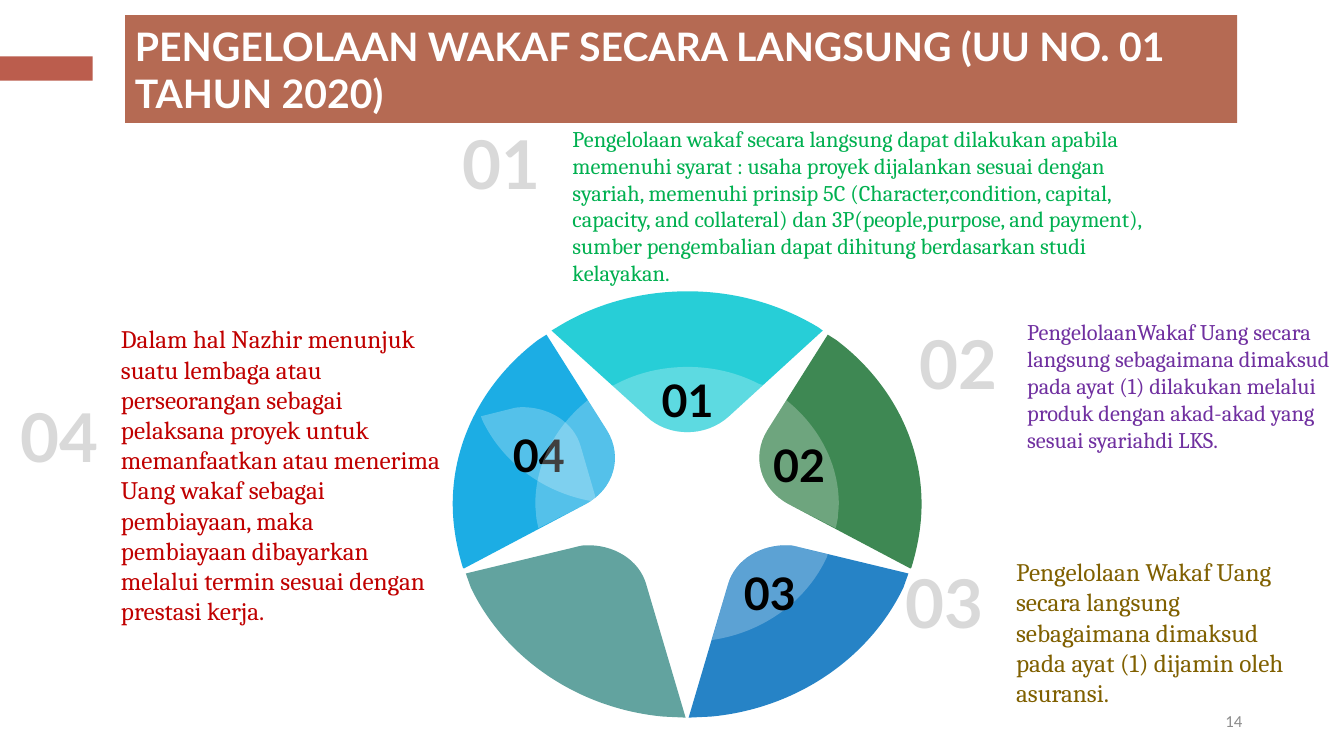
from lxml.etree import SubElement
from pptx import Presentation
from pptx.dml.color import RGBColor
from pptx.enum.shapes import MSO_SHAPE
from pptx.enum.text import MSO_ANCHOR, PP_ALIGN
from pptx.oxml.ns import qn
from pptx.util import Pt

PX = 9144  # EMU per px, 100 px to the inch

WHITE = RGBColor(0xFF, 0xFF, 0xFF)
BLACK = RGBColor(0x00, 0x00, 0x00)
PALE_GREY = RGBColor(0xD9, 0xD9, 0xD9)
MID_GREY = RGBColor(0x8C, 0x8C, 0x8C)
BRICK = RGBColor(0xBB, 0x5D, 0x4D)
CLAY = RGBColor(0xB5, 0x6A, 0x53)
TURQUOISE = RGBColor(0x27, 0xCE, 0xD7)
FOREST = RGBColor(0x3E, 0x88, 0x53)
BLUE = RGBColor(0x26, 0x83, 0xC6)
TEAL = RGBColor(0x62, 0xA3, 0x9F)
SKY = RGBColor(0x1C, 0xAD, 0xE4)
RED = RGBColor(0xC0, 0x00, 0x00)
GREEN = RGBColor(0x00, 0xB0, 0x50)
OLIVE = RGBColor(0x80, 0x60, 0x00)
PURPLE = RGBColor(0x70, 0x30, 0xA0)

# Content
TITLE = "PENGELOLAAN WAKAF SECARA LANGSUNG (UU NO. 01 TAHUN 2020)"
PAGE_NUMBER = "14"
# number, number position, text box, side inset, anchor, size, colour, text
POINTS = [
    ("01", (449, 116), (558, 119, 594, 172), 10, MSO_ANCHOR.TOP, 16, GREEN,
     "Pengelolaan wakaf secara langsung dapat dilakukan apabila memenuhi syarat : "
     "usaha proyek dijalankan sesuai dengan syariah, memenuhi prinsip 5C "
     "(Character,condition, capital, capacity, and collateral) dan "
     "3P(people,purpose, and payment), sumber pengembalian dapat dihitung "
     "berdasarkan studi kelayakan."),
    ("02", (902, 315), (1009, 311, 323, 172), 10, MSO_ANCHOR.TOP, 16, PURPLE,
     "PengelolaanWakaf Uang secara langsung sebagaimana dimaksud pada ayat (1) "
     "dilakukan melalui produk dengan akad-akad yang sesuai syariahdi LKS."),
    ("03", (888, 552), (998, 547, 307, 162), 10, MSO_ANCHOR.TOP, 18, OLIVE,
     "Pengelolaan Wakaf Uang secara langsung sebagaimana dimaksud pada ayat (1) "
     "dijamin oleh asuransi."),
    ("04", (11, 387), (120, 313, 320, 313), 0, MSO_ANCHOR.BOTTOM, 18, RED,
     "Dalam hal Nazhir menunjuk suatu lembaga atau perseorangan sebagai pelaksana "
     "proyek untuk memanfaatkan atau menerima Uang wakaf sebagai pembiayaan, maka "
     "pembiayaan dibayarkan melalui termin sesuai dengan prestasi kerja."),
]

# Wheel outlines: two numbers are a line end, six are a Bézier curve
TOP_PETAL = [(682, 289), (730, 289, 774, 302, 812, 325), (816, 328), (723, 413),
             (700, 434, 663, 434, 641, 413), (547, 328), (552, 325),
             (589, 302, 634, 289, 682, 289)]
SIDE_PETAL = [(821, 332), (829, 337), (881, 376, 914, 435, 914, 500),
              (914, 522, 910, 543, 904, 563), (903, 564), (782, 500),
              (754, 485, 745, 453, 761, 427)]
LOWER_PETAL = [(782, 541), (786, 541, 789, 542, 793, 543), (901, 569), (896, 583),
               (863, 652, 791, 703, 705, 711), (683, 712), (722, 580),
               (729, 555, 755, 540, 782, 541)]
TOP_TIP = [(682, 364), (708, 364, 732, 370, 753, 381), (757, 382), (723, 413),
           (700, 434, 663, 434, 641, 413), (607, 383), (611, 381),
           (632, 370, 656, 364, 682, 364)]
SIDE_TIP = [(780, 397), (788, 404), (815, 429, 832, 463, 832, 500),
            (832, 505, 831, 510, 831, 514), (829, 524), (782, 500),
            (754, 485, 745, 453, 761, 427)]
LOWER_TIP = [(782, 541), (786, 541, 789, 542, 793, 543), (821, 550), (820, 553),
             (801, 594, 761, 625, 712, 634), (706, 635), (722, 580),
             (729, 555, 755, 540, 782, 541)]
MIRROR_SUM = 1363  # twice the x of the wheel's axis
CURVE_STEPS = 24


def box(*lengths):
    return [round(length * PX) for length in lengths]


def flip(outline, dx=0, dy=0):
    """Mirror an outline in the wheel's axis, then shift it."""
    return [tuple(dy + value if i % 2 else MIRROR_SUM - value + dx
                  for i, value in enumerate(step)) for step in outline]


def bounds(outline):
    """Left, top, right and bottom of an outline, curves included."""
    points = [outline[0]]
    for step in outline[1:]:
        controls = [points[-1], step[:2], step[2:4], step[4:]]
        if len(step) == 6:
            for i in range(1, CURVE_STEPS):
                t = i / CURVE_STEPS
                weights = ((1 - t) ** 3, 3 * t * (1 - t) ** 2, 3 * t * t * (1 - t), t ** 3)
                points.append(tuple(sum(w * c[axis] for w, c in zip(weights, controls))
                                    for axis in (0, 1)))
        points.append(step[-2:])
    xs, ys = zip(*points)
    return box(min(xs), min(ys), max(xs), max(ys))


def paint(shape, color, alpha=None):
    shape.shadow.inherit = False
    shape.line.fill.background()
    shape.fill.solid()
    shape.fill.fore_color.rgb = color
    if alpha:
        color_element = shape.fill._xPr.find(".//" + qn("a:srgbClr"))
        SubElement(color_element, qn("a:alpha"), val=str(alpha * 1000))


def add_outline(shapes, outline, color, alpha=None):
    # The builder sets the frame; the curves then replace its straight edges
    left, top, right, bottom = bounds(outline)
    builder = shapes.build_freeform(left, top, scale=1.0)
    builder.add_line_segments([(right, top), (right, bottom), (left, bottom)])
    shape = builder.convert_to_shape()
    geometry = shape._element.find(".//" + qn("a:path"))
    for edge in list(geometry):
        geometry.remove(edge)
    for i, step in enumerate(outline):
        tag = "a:moveTo" if i == 0 else "a:lnTo" if len(step) == 2 else "a:cubicBezTo"
        segment = SubElement(geometry, qn(tag))
        values = box(*step)
        for x, y in zip(values[::2], values[1::2]):
            SubElement(segment, qn("a:pt"), x=str(x - left), y=str(y - top))
    SubElement(geometry, qn("a:close"))
    paint(shape, color, alpha)
    return shape


def write(shape, text, size, font, color, bold=False,
          align=PP_ALIGN.LEFT, anchor=MSO_ANCHOR.TOP, inset=10):
    frame = shape.text_frame
    frame.word_wrap = True
    frame.vertical_anchor = anchor
    frame.margin_left = frame.margin_right = inset * PX
    paragraph = frame.paragraphs[0]
    paragraph.alignment = align
    run = paragraph.add_run()
    run.text = text
    run.font.size = Pt(size)
    run.font.name = font
    run.font.bold = bold
    run.font.color.rgb = color


presentation = Presentation()
presentation.slide_width, presentation.slide_height = box(1333, 750)
slide = presentation.slides.add_slide(presentation.slide_layouts[6])

# Page number, accent bar and title
page_number = slide.shapes.add_textbox(*box(942, 695, 300, 40))
write(page_number, PAGE_NUMBER, 12, "Calibri", MID_GREY,
      align=PP_ALIGN.RIGHT, anchor=MSO_ANCHOR.MIDDLE)
accent = slide.shapes.add_shape(MSO_SHAPE.RECTANGLE, *box(0, 56, 92, 24))
paint(accent, BRICK)
title = slide.shapes.add_shape(MSO_SHAPE.RECTANGLE, *box(124, 15, 1103, 107))
paint(title, CLAY)
write(title, TITLE, 28, "Lato", WHITE, bold=True, anchor=MSO_ANCHOR.MIDDLE)

# Wheel: petals, then their translucent tips
wheel = slide.shapes.add_group_shape()
for outline, color in [(TOP_PETAL, TURQUOISE), (SIDE_PETAL, FOREST), (LOWER_PETAL, BLUE),
                       (flip(LOWER_PETAL), TEAL), (flip(SIDE_PETAL), SKY)]:
    add_outline(wheel.shapes, outline, color)
for outline, number in [(TOP_TIP, "01"), (SIDE_TIP, "02"), (LOWER_TIP, "03"),
                        (flip(LOWER_TIP, -65, -137), "04"), (flip(SIDE_TIP), None)]:
    tip = add_outline(wheel.shapes, outline, WHITE, alpha=25)
    if number:
        write(tip, number, 32, "Lato", BLACK, bold=True,
              align=PP_ALIGN.CENTER, anchor=MSO_ANCHOR.MIDDLE)

# Numbered points around the wheel
for number, position, text_box, inset, anchor, size, color, text in POINTS:
    label = slide.shapes.add_textbox(*box(*position, 123, 91))
    write(label, number, 48, "Lato", PALE_GREY, bold=True)
    body = slide.shapes.add_textbox(*box(*text_box))
    write(body, text, size, "Cambria", color, anchor=anchor, inset=inset)

presentation.save("out.pptx")
